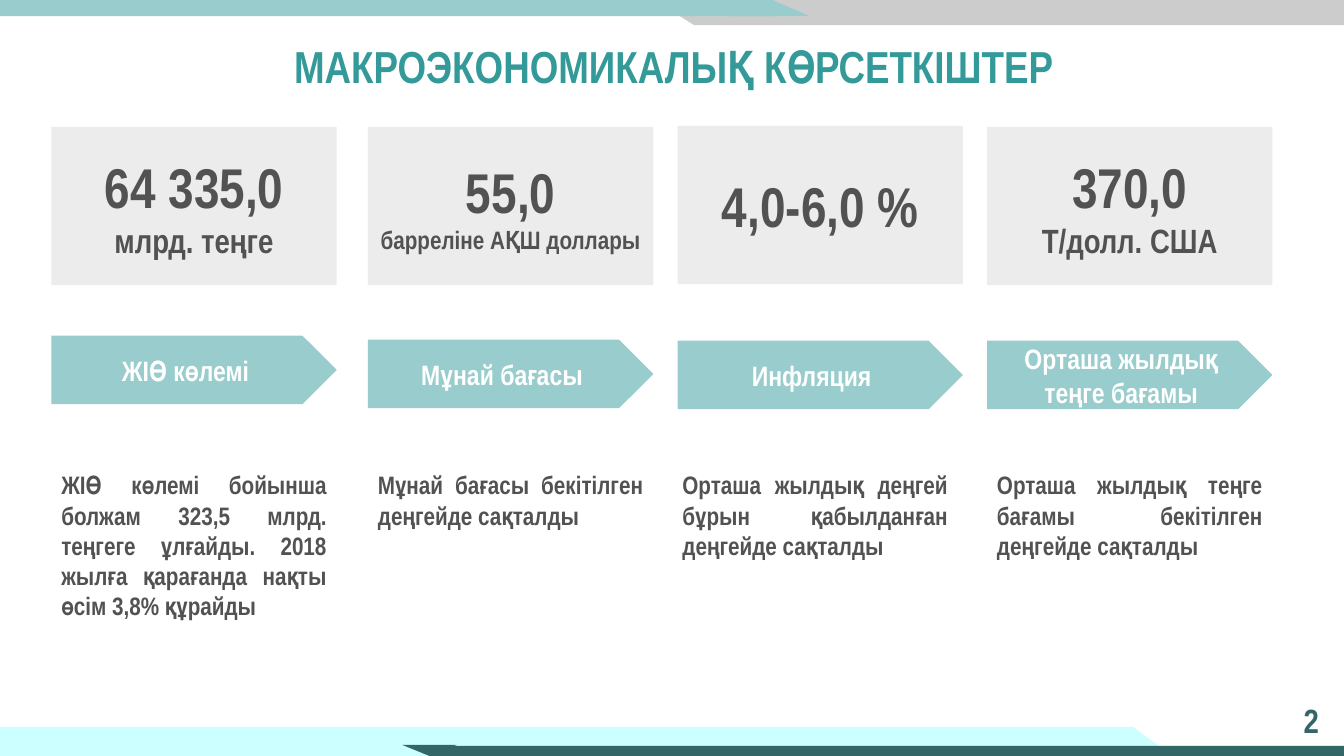
from dataclasses import dataclass
from pptx import Presentation
from pptx.dml.color import RGBColor
from pptx.enum.shapes import MSO_SHAPE
from pptx.enum.text import MSO_ANCHOR, PP_ALIGN
from pptx.util import Inches, Pt

RECT, TRIANGLE, ARROW = MSO_SHAPE.RECTANGLE, MSO_SHAPE.ISOSCELES_TRIANGLE, MSO_SHAPE.PENTAGON
TOP, MIDDLE = MSO_ANCHOR.TOP, MSO_ANCHOR.MIDDLE
CENTER, JUSTIFY = PP_ALIGN.CENTER, PP_ALIGN.JUSTIFY


@dataclass(frozen=True)
class Theme:
    font: str = "Arial Narrow"
    title: str = "339999"
    accent: str = "99CCCC"
    pale: str = "CCFFFF"
    dark: str = "336666"
    band: str = "CCCCCC"
    card: str = "ECECEC"
    text: str = "525252"
    white: str = "FFFFFF"
    title_size: int = 32
    value_size: int = 40
    unit_size: int = 24
    label_size: int = 20
    body_size: int = 18
    number_size: int = 24


THEME = Theme()
TITLE = "МАКРОЭКОНОМИКАЛЫҚ КӨРСЕТКІШТЕР"
PAGE_NUMBER = "2"

BANDS = [
    (RECT, 6.89, 0, 6.45, 0.25, 0, THEME.band),
    (TRIANGLE, 6.49, 0, 0.79, 0.25, 180, THEME.band),
    (RECT, 0, -0.01, 7.64, 0.17, 0, THEME.accent),
    (TRIANGLE, 7.24, -0.01, 0.79, 0.17, 0, THEME.accent),
    (RECT, 0, 7.21, 11.24, 0.29, 0, THEME.pale),
    (TRIANGLE, 3.99, 7.39, 0.54, 0.11, 180, THEME.dark),
    (TRIANGLE, 10.84, 7.21, 0.79, 0.29, 0, THEME.pale),
    (RECT, 4.26, 7.4, 9.07, 0.1, 0, THEME.dark),
]

INDICATORS = [
    dict(left=0.51, card_top=1.26, arrow_top=3.33, note_left=0.51, note_height=1.96,
         value="64 335,0", unit="млрд. теңге", unit_size=THEME.unit_size, label="ЖІӨ көлемі",
         note="ЖІӨ көлемі бойынша болжам 323,5 млрд. теңгеге ұлғайды. "
              "2018 жылға қарағанда нақты өсім 3,8% құрайды"),
    dict(left=3.65, card_top=1.26, arrow_top=3.37, note_left=3.65, note_height=1.96,
         value="55,0", unit="барреліне АҚШ доллары", unit_size=THEME.body_size,
         label="Мұнай бағасы",
         note="Мұнай бағасы бекітілген деңгейде сақталды"),
    dict(left=6.72, card_top=1.25, arrow_top=3.38, note_left=6.67, note_height=1.96,
         value="4,0-6,0 %", unit=None, unit_size=None, label="Инфляция",
         note="Орташа жылдық деңгей бұрын қабылданған деңгейде сақталды"),
    dict(left=9.79, card_top=1.26, arrow_top=3.38, note_left=9.79, note_height=1.01,
         value="370,0", unit="Т/долл. США", unit_size=THEME.unit_size,
         label="Орташа жылдық теңге бағамы",
         note="Орташа жылдық теңге бағамы бекітілген деңгейде сақталды"),
]
COLUMN_WIDTH, CARD_HEIGHT, ARROW_HEIGHT, NOTE_TOP = 2.83, 1.57, 0.68, 4.61


def write(sp, lines, color, align=CENTER, anchor=MIDDLE, spacing=None):
    tf = sp.text_frame
    tf.word_wrap = True
    tf.vertical_anchor = anchor
    tf.text = "\n".join(text for text, size in lines)
    for p, (text, size) in zip(tf.paragraphs, lines):
        p.alignment = align
        if spacing:
            p.line_spacing = spacing
        font = p.runs[0].font
        font.name, font.size, font.bold = THEME.font, Pt(size), True
        font.color.rgb = RGBColor.from_string(color)


def add_block(s, kind, left, top, width, height, fill, rotation=0):
    sp = s.shapes.add_shape(kind, Inches(left), Inches(top), Inches(width), Inches(height))
    sp.shadow.inherit = False
    sp.rotation = rotation
    sp.fill.solid()
    sp.fill.fore_color.rgb = RGBColor.from_string(fill)
    sp.line.fill.background()
    return sp


def add_text(s, left, top, width, height):
    return s.shapes.add_textbox(Inches(left), Inches(top), Inches(width), Inches(height))


def add_indicator(s, item):
    card = add_block(s, RECT, item["left"], item["card_top"], COLUMN_WIDTH, CARD_HEIGHT, THEME.card)
    lines = [(item["value"], THEME.value_size)]
    if item["unit"]:
        lines.append((item["unit"], item["unit_size"]))
    write(card, lines, THEME.text)

    arrow = add_block(s, ARROW, item["left"], item["arrow_top"], COLUMN_WIDTH, ARROW_HEIGHT, THEME.accent)
    write(arrow, [(item["label"], THEME.label_size)], THEME.white)

    note = add_text(s, item["note_left"], NOTE_TOP, COLUMN_WIDTH, item["note_height"])
    write(note, [(item["note"], THEME.body_size)], THEME.text, JUSTIFY, TOP)


def main():
    prs = Presentation()
    prs.slide_width, prs.slide_height = Inches(13.33), Inches(7.5)
    s = prs.slides.add_slide(prs.slide_layouts[5])

    title = s.shapes.title
    title.left, title.top = Inches(0.17), Inches(0.35)
    title.width, title.height = Inches(13.03), Inches(0.67)
    write(title, [(TITLE, THEME.title_size)], THEME.title, spacing=0.9)

    for kind, left, top, width, height, rotation, fill in BANDS:
        add_block(s, kind, left, top, width, height, fill, rotation)
    for item in INDICATORS:
        add_indicator(s, item)

    number = add_text(s, 12.67, 6.95, 0.67, 0.44)
    write(number, [(PAGE_NUMBER, THEME.number_size)], THEME.dark, spacing=0.9)
    prs.save("out.pptx")


if __name__ == "__main__":
    main()
